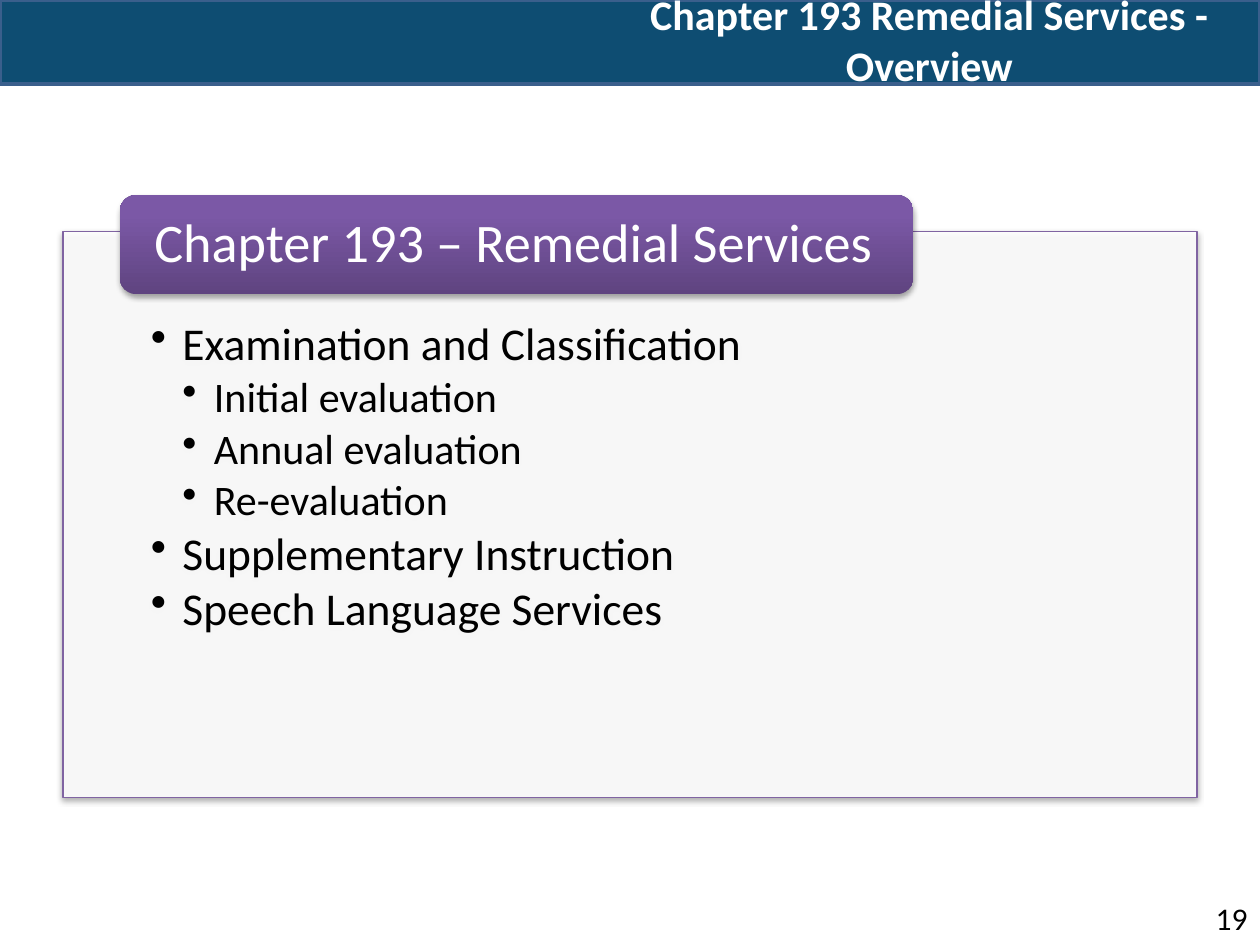
from lxml import etree
from pptx import Presentation
from pptx.dml.color import RGBColor
from pptx.enum.shapes import MSO_SHAPE
from pptx.enum.text import MSO_ANCHOR, MSO_AUTO_SIZE, PP_ALIGN
from pptx.oxml import parse_xml
from pptx.oxml.ns import qn
from pptx.util import Pt

RECTANGLE, ROUNDED = MSO_SHAPE.RECTANGLE, MSO_SHAPE.ROUNDED_RECTANGLE
TOP, MIDDLE = MSO_ANCHOR.TOP, MSO_ANCHOR.MIDDLE
LEFT, CENTER, RIGHT = PP_ALIGN.LEFT, PP_ALIGN.CENTER, PP_ALIGN.RIGHT
NAMESPACE = "http://schemas.openxmlformats.org/drawingml/2006/main"

TITLE = "Chapter 193 Remedial Services - Overview"
HEADING = "Chapter 193 – Remedial Services"
SERVICES = [
    (1, "Examination and Classification"),
    (2, "Initial evaluation"),
    (2, "Annual evaluation"),
    (2, "Re-evaluation"),
    (1, "Supplementary Instruction"),
    (1, "Speech Language Services"),
]
PAGE_NUMBER = "19"
LEVEL_SIZES = {1: 26, 2: 24}
INDENT = 18
HEADING_STOPS = [(0, "5F4480"), (80, "7B58A6"), (100, "7C57A8")]


def color(value):
    return RGBColor.from_string(value)


def add_box(slide, kind, box, fill, line=None, width=0):
    shape = slide.shapes.add_shape(kind, *map(Pt, box))
    shape.shadow.inherit = False
    shape.fill.solid()
    shape.fill.fore_color.rgb = color(fill)
    if line:
        shape.line.color.rgb = color(line)
        shape.line.width = Pt(width)
    else:
        shape.line.fill.background()
    return shape


def add_shadow(shape):
    effects = shape.element.spPr.find(qn("a:effectLst"))
    effects.append(parse_xml(
        f'<a:outerShdw xmlns:a="{NAMESPACE}" blurRad="{Pt(3.15)}" dist="{Pt(1.8)}" '
        'dir="5400000" rotWithShape="0"><a:srgbClr val="000000">'
        '<a:alpha val="35000"/></a:srgbClr></a:outerShdw>'))


def set_gradient(shape, stops):
    marks = "".join(f'<a:gs pos="{position * 1000}"><a:srgbClr val="{value}"/></a:gs>'
                    for position, value in stops)
    gradient = parse_xml(
        f'<a:gradFill xmlns:a="{NAMESPACE}" rotWithShape="1"><a:gsLst>{marks}</a:gsLst>'
        '<a:lin ang="16200000" scaled="0"/></a:gradFill>')
    properties = shape.element.spPr
    properties.replace(properties.find(qn("a:solidFill")), gradient)


def set_frame(shape, anchor, insets):
    frame = shape.text_frame
    frame.word_wrap = True
    frame.auto_size = MSO_AUTO_SIZE.NONE
    frame.vertical_anchor = anchor
    (frame.margin_left, frame.margin_top,
     frame.margin_right, frame.margin_bottom) = map(Pt, insets)
    return frame


def style(paragraph, size, value, alignment=LEFT, bold=False):
    paragraph.alignment = alignment
    for run in paragraph.runs:
        run.font.name = "Calibri"
        run.font.size = Pt(size)
        run.font.bold = bold
        run.font.color.rgb = color(value)


def add_header(slide):
    bar = add_box(slide, RECTANGLE, (0, 0, 720, 48), "0E4D72", "3A5F8C", 2)
    title = slide.shapes.title
    title.element.addprevious(bar.element)
    title.left, title.top, title.width, title.height = map(Pt, (342, 0, 378, 44.6))
    frame = set_frame(title, MIDDLE, (7.2, 3.6, 7.2, 3.6))
    frame.text = TITLE
    style(frame.paragraphs[0], 24, "FFFFFF", CENTER, True)


def add_panel(slide):
    panel = add_box(slide, RECTANGLE, (36, 132.5, 648, 323.2), "FFFFFF", "8064A2", 0.75)
    fill_color = panel.element.spPr.find(qn("a:solidFill"))[0]
    etree.SubElement(fill_color, qn("a:alpha"), val="90000")
    add_shadow(panel)
    frame = set_frame(panel, TOP, (50.3, 51.1, 50.3, 14.4))
    frame.text = "\n".join(text for _, text in SERVICES)
    for paragraph, (level, _) in zip(frame.paragraphs, SERVICES):
        properties = paragraph._p.get_or_add_pPr()
        properties.set("marL", str(Pt(INDENT * level)))
        properties.set("indent", str(-Pt(INDENT)))
        etree.SubElement(properties, qn("a:buChar"), char="•")
        paragraph.level = level
        paragraph.line_spacing = 0.9
        paragraph.space_after = Pt(3.5)
        style(paragraph, LEVEL_SIZES[level], "000000")


def add_heading(slide):
    heading = add_box(slide, ROUNDED, (68.4, 111.5, 453.6, 56.6), HEADING_STOPS[0][1])
    set_gradient(heading, HEADING_STOPS)
    add_shadow(heading)
    frame = set_frame(heading, MIDDLE, (17.1, 0, 17.1, 0))
    frame.text = HEADING
    frame.paragraphs[0].line_spacing = 0.9
    style(frame.paragraphs[0], 31, "FFFFFF")


def add_page_number(slide):
    box = slide.shapes.add_textbox(*map(Pt, (672, 510, 48, 29)))
    frame = set_frame(box, TOP, (7.2, 3.6, 7.2, 3.6))
    frame.text = PAGE_NUMBER
    style(frame.paragraphs[0], 18, "000000", RIGHT)


def main():
    presentation = Presentation()
    presentation.slide_width, presentation.slide_height = Pt(720), Pt(540)
    slide = presentation.slides.add_slide(presentation.slide_layouts[5])
    add_header(slide)
    add_page_number(slide)
    add_panel(slide)
    add_heading(slide)
    presentation.save("out.pptx")


if __name__ == "__main__":
    main()
